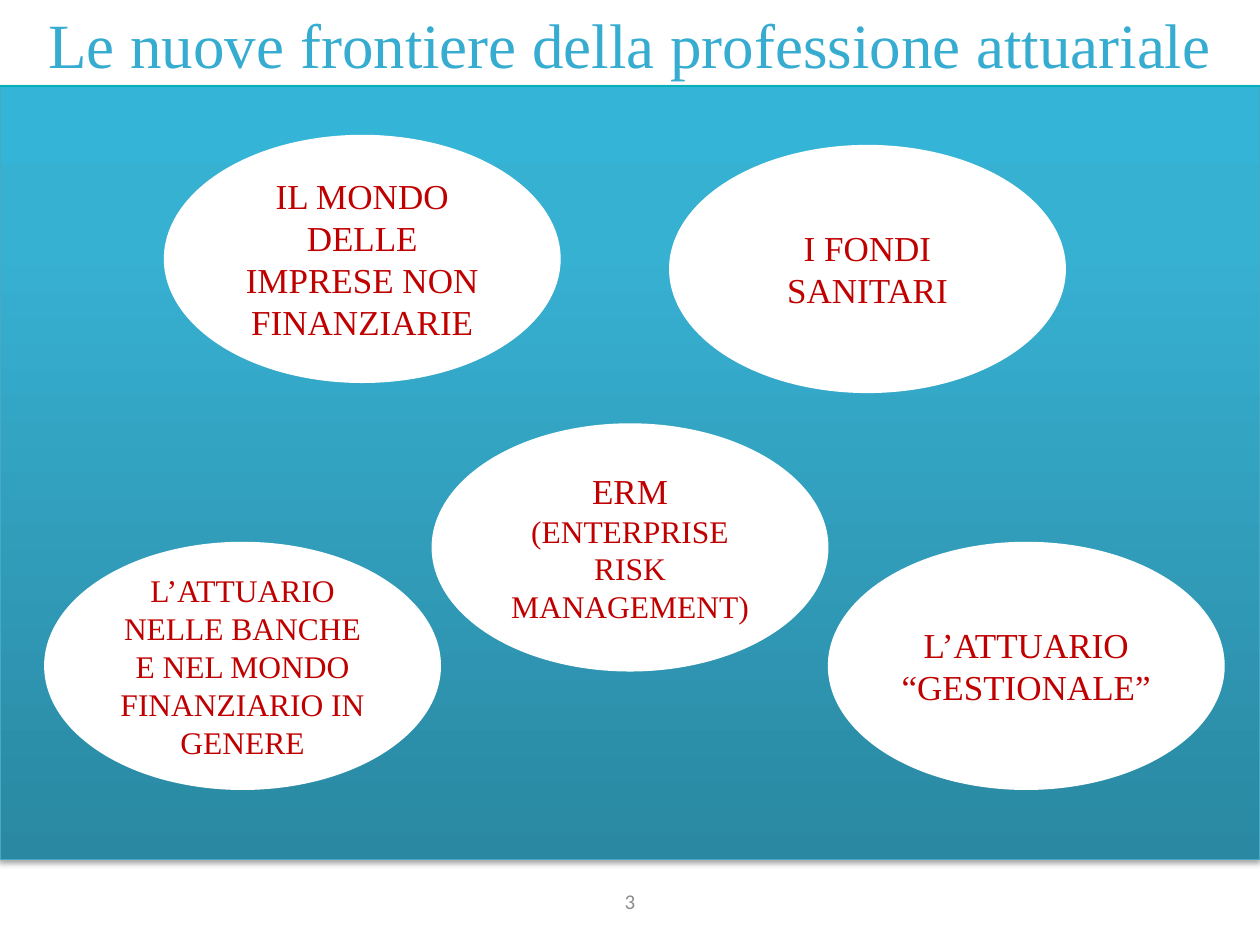
from dataclasses import dataclass

from lxml.etree import SubElement
from pptx import Presentation
from pptx.dml.color import RGBColor
from pptx.enum.shapes import MSO_CONNECTOR, MSO_SHAPE
from pptx.enum.text import MSO_ANCHOR, MSO_AUTO_SIZE, PP_ALIGN
from pptx.oxml import parse_xml
from pptx.oxml.ns import nsdecls, qn
from pptx.util import Inches, Pt


@dataclass(frozen=True)
class Theme:
    serif: str = "Times New Roman"
    sans: str = "Calibri"
    title: str = "37ACD1"
    topic: str = "C00000"
    number: str = "8C8C8C"
    white: str = "FFFFFF"
    rule: str = "04AFB8"
    border: str = "46AAC5"
    gradient: tuple = ((0, "2A88A2"), (80, "37B1D2"), (100, "34B4D6"))
    title_size: int = 36
    large: int = 20
    medium: int = 18
    small: int = 12


@dataclass(frozen=True)
class Topic:
    left: float
    top: float
    runs: tuple  # (text, size) pairs


THEME = Theme()
WIDTH, HEIGHT = 10, 7.5
BAND_TOP, BAND_BOTTOM = 0.68, 6.82
OVAL_W, OVAL_H = 3.15, 1.97
LOWER_ROW = 4.3

TOPICS = (
    Topic(1.3, 1.07, (("IL MONDO DELLE IMPRESE NON FINANZIARIE", THEME.large),)),
    Topic(5.31, 1.15, (("I FONDI SANITARI", THEME.large),)),
    Topic(0.35, LOWER_ROW, (
        ("L’ATTUARIO NELLE BANCHE E NEL MONDO FINANZIARIO IN GENERE", THEME.medium),)),
    Topic((WIDTH - OVAL_W) / 2, 3.36, (
        ("ERM ", THEME.large), ("(ENTERPRISE RISK MANAGEMENT)", THEME.medium))),
    Topic(6.57, LOWER_ROW, (("L’ATTUARIO “GESTIONALE”", THEME.large),)),
)


def rgb(value: str) -> RGBColor:
    return RGBColor.from_string(value)


def write(sp, *runs: tuple, color: str, font: str = THEME.serif) -> None:
    """Fill a shape with one centred paragraph of (text, size) runs."""
    tf = sp.text_frame
    tf.word_wrap = True
    tf.auto_size = MSO_AUTO_SIZE.NONE
    tf.vertical_anchor = MSO_ANCHOR.MIDDLE
    p = tf.paragraphs[0]
    p.alignment = PP_ALIGN.CENTER
    for text, size in runs:
        r = p.add_run()
        r.text = text
        r.font.name = font
        r.font.size = Pt(size)
        r.font.color.rgb = rgb(color)


def add_rule(slide, top: float) -> None:
    line = slide.shapes.add_connector(
        MSO_CONNECTOR.STRAIGHT, 0, Inches(top), Inches(WIDTH), Inches(top))
    line.line.color.rgb = rgb(THEME.rule)
    line.line.width = Pt(1)
    SubElement(line._element.spPr, qn("a:effectLst"))


def add_band(slide) -> None:
    """Draw the full-width gradient panel with its soft lower shadow."""
    sp = slide.shapes.add_shape(MSO_SHAPE.RECTANGLE, 0, Inches(BAND_TOP),
                                Inches(WIDTH), Inches(BAND_BOTTOM - BAND_TOP))
    sp.line.color.rgb = rgb(THEME.border)
    sp.line.width = Pt(0.75)
    stops = "".join(
        f'<a:gs pos="{pos * 1000}"><a:srgbClr val="{color}"/></a:gs>'
        for pos, color in THEME.gradient)
    fill = parse_xml(
        f'<a:gradFill {nsdecls("a")} rotWithShape="1"><a:gsLst>{stops}</a:gsLst>'
        '<a:lin ang="16200000" scaled="0"/></a:gradFill>')
    shadow = parse_xml(
        f'<a:effectLst {nsdecls("a")}>'
        f'<a:outerShdw blurRad="{Pt(3.1)}" dist="{Pt(1.8)}" dir="5400000" rotWithShape="0">'
        '<a:srgbClr val="000000"><a:alpha val="35000"/></a:srgbClr>'
        '</a:outerShdw></a:effectLst>')
    sp_pr = sp._element.spPr
    sp_pr.find(qn("a:prstGeom")).addnext(fill)
    sp_pr.append(shadow)


def add_title(slide, text: str) -> None:
    title = slide.shapes.title
    title.left, title.top = 0, 0
    title.width, title.height = Inches(WIDTH), Inches(BAND_TOP)
    write(title, (text, THEME.title_size), color=THEME.title)


def add_number(slide, text: str) -> None:
    box = slide.shapes.add_textbox(0, Inches(6.95), Inches(WIDTH), Inches(0.4))
    write(box, (text, THEME.small), color=THEME.number, font=THEME.sans)


def add_topic(slide, topic: Topic) -> None:
    sp = slide.shapes.add_shape(MSO_SHAPE.OVAL, Inches(topic.left), Inches(topic.top),
                                Inches(OVAL_W), Inches(OVAL_H))
    sp.shadow.inherit = False
    sp.fill.solid()
    sp.fill.fore_color.rgb = rgb(THEME.white)
    sp.line.fill.background()
    write(sp, *topic.runs, color=THEME.topic)


def main() -> None:
    prs = Presentation()
    prs.slide_width, prs.slide_height = Inches(WIDTH), Inches(HEIGHT)
    slide = prs.slides.add_slide(prs.slide_layouts[5])
    add_rule(slide, BAND_BOTTOM)
    add_band(slide)
    add_rule(slide, BAND_TOP)
    add_title(slide, "Le nuove frontiere della professione attuariale")
    add_number(slide, "3")
    for topic in TOPICS:
        add_topic(slide, topic)
    prs.save("out.pptx")


if __name__ == "__main__":
    main()
